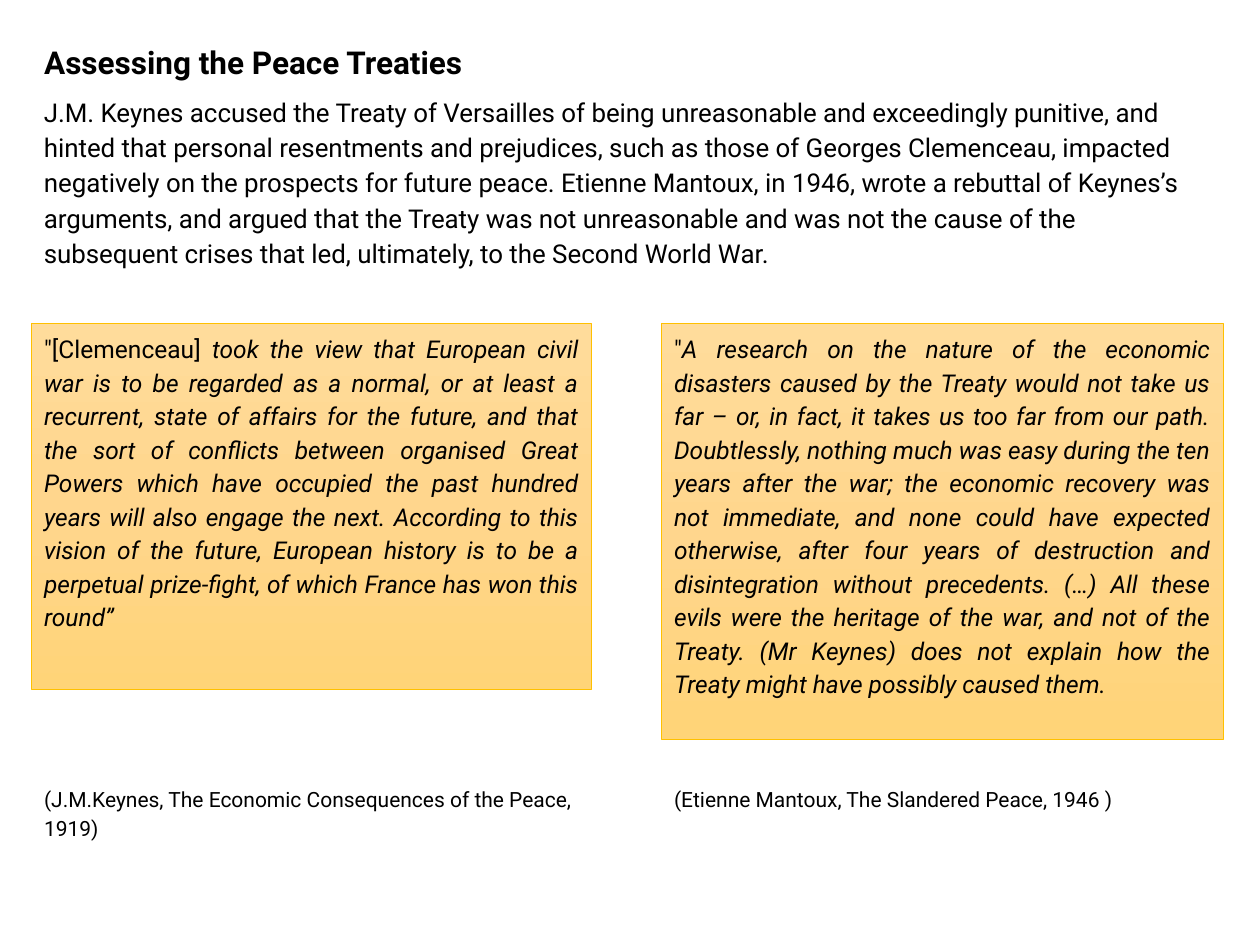
import copy

import pptx
import pptx.dml.color
import pptx.enum.text
import pptx.oxml.ns
import pptx.util
from lxml import etree

Pt = pptx.util.Pt
RGBColor = pptx.dml.color.RGBColor
Align = pptx.enum.text.PP_ALIGN

TITLE = "Assessing the Peace Treaties"
INTRODUCTION = (
    "J.M. Keynes accused the Treaty of Versailles of being unreasonable and exceedingly punitive, "
    "and hinted that personal resentments and prejudices, such as those of Georges Clemenceau, "
    "impacted negatively on the prospects for future peace. Etienne Mantoux, in 1946, wrote a "
    "rebuttal of Keynes’s arguments, and argued that the Treaty was not unreasonable and was not "
    "the cause of the subsequent crises that led, ultimately, to the Second World War."
)
QUOTES = [
    {
        "opening": '"[Clemenceau] ',
        "quote": (
            "took the view that European civil war is to be regarded as a normal, or at least a "
            "recurrent, state of affairs for the future, and that the sort of conflicts between "
            "organised Great Powers which have occupied the past hundred years will also engage "
            "the next. According to this vision of the future, European history is to be a "
            "perpetual prize-fight, of which France has won this round”"
        ),
        "citation": "(J.M.Keynes, The Economic Consequences of the Peace, 1919)",
        "left": 18, "width": 320, "height": 209,
    },
    {
        "opening": '"',
        "quote": (
            "A research on the nature of the economic disasters caused by the Treaty would not "
            "take us far – or, in fact, it takes us too far from our path. Doubtlessly, nothing "
            "much was easy during the ten years after the war; the economic recovery was not "
            "immediate, and none could have expected otherwise, after four years of destruction "
            "and disintegration without precedents. (…) All these evils were the heritage of the "
            "war, and not of the Treaty. (Mr Keynes) does not explain how the Treaty might have "
            "possibly caused them."
        ),
        "citation": "(Etienne Mantoux, The Slandered Peace, 1946 )",
        "left": 378, "width": 321, "height": 237.5,
    },
]

FONT = "Roboto"
BLACK = RGBColor(0x00, 0x00, 0x00)
GOLD = RGBColor(0xFF, 0xC0, 0x00)
GRADIENT = [
    (0, RGBColor(0xFF, 0xDC, 0x9B)),
    (0.5, RGBColor(0xFF, 0xD6, 0x8D)),
    (1, RGBColor(0xFF, 0xD4, 0x78)),
]
LEFT, FULL_WIDTH = 18, 681
QUOTE_TOP, CITATION_TOP = 185, 417.5
CITATION_INSET = 30


def set_text(shape, box, runs, size, bold=False, align=Align.LEFT, top_inset=3.6):
    """Place the shape and fill it with one paragraph of (text, italic) runs."""
    shape.left, shape.top, shape.width, shape.height = (Pt(length) for length in box)
    frame = shape.text_frame
    frame.word_wrap = True
    frame.auto_size = pptx.enum.text.MSO_AUTO_SIZE.NONE
    frame.vertical_anchor = pptx.enum.text.MSO_ANCHOR.TOP
    frame.margin_left = frame.margin_right = Pt(7.2)
    frame.margin_top, frame.margin_bottom = Pt(top_inset), Pt(3.6)

    paragraph = frame.paragraphs[0]
    properties = paragraph._p.get_or_add_pPr()
    properties.set("marL", "0")
    properties.set("indent", "0")
    etree.SubElement(properties, pptx.oxml.ns.qn("a:buNone"))
    paragraph.alignment = align
    paragraph.line_spacing = 1.14
    paragraph.space_before = Pt(0)
    font = paragraph.font
    font.name, font.size, font.bold = FONT, Pt(size), bold
    font.color.rgb = BLACK
    for text, italic in runs:
        run = paragraph.add_run()
        run.text = text
        if italic:
            run.font.italic = True


def fill_with_gradient(shape):
    shape.fill.gradient()
    shape.fill.gradient_angle = 270
    stop_list = shape._element.spPr.find(".//" + pptx.oxml.ns.qn("a:gsLst"))
    stop_list.append(copy.deepcopy(stop_list[-1]))
    for stop, (position, color) in zip(shape.fill.gradient_stops, GRADIENT):
        stop.position = position
        stop.color.rgb = color


def main():
    presentation = pptx.Presentation()
    presentation.slide_width, presentation.slide_height = Pt(720), Pt(540)
    comparison_layout = presentation.slide_layouts[4]
    slide = presentation.slides.add_slide(comparison_layout)
    title, *bodies = slide.placeholders

    set_text(title, (LEFT, 18, FULL_WIDTH, 31), [(TITLE, False)], 18, bold=True)
    introduction = slide.shapes.add_textbox(0, 0, 0, 0)
    set_text(introduction, (LEFT, 49, FULL_WIDTH, 121.5), [(INTRODUCTION, False)], 14.8)

    for item, citation, quote in zip(QUOTES, bodies[::2], bodies[1::2]):
        left, width = item["left"], item["width"]
        set_text(citation, (left, CITATION_TOP, width, 104.5), [(item["citation"], False)], 12,
                 top_inset=CITATION_INSET)
        set_text(quote, (left, QUOTE_TOP, width, item["height"]),
                 [(item["opening"], False), (item["quote"], True)], 14, align=Align.JUSTIFY)
        fill_with_gradient(quote)
        quote.line.color.rgb = GOLD
        quote.line.width = Pt(0.75)

    presentation.save("out.pptx")


if __name__ == "__main__":
    main()
